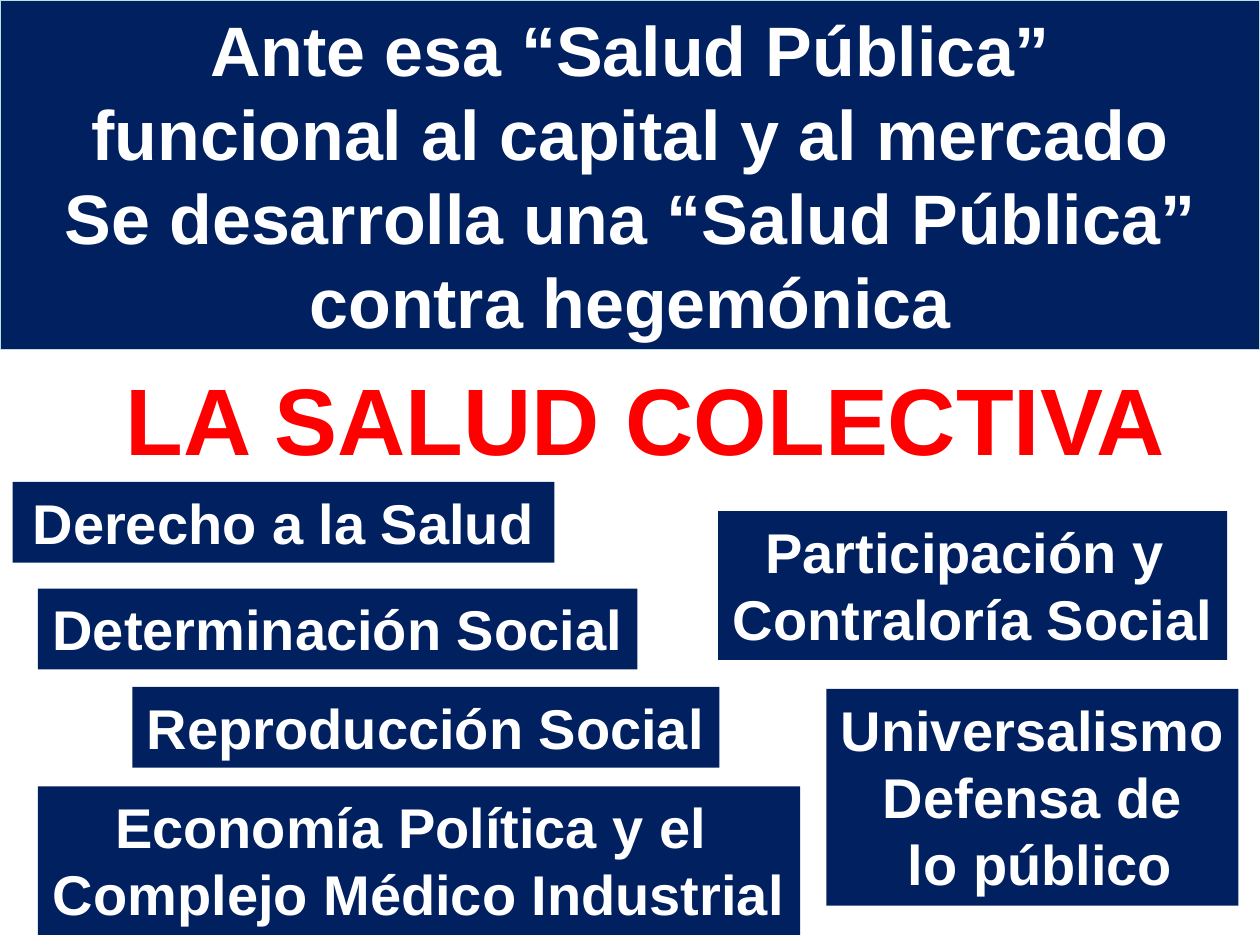
from dataclasses import dataclass

from pptx import Presentation
from pptx import util as u
from pptx.dml.color import RGBColor
from pptx.enum import shapes, text

WIDTH, HEIGHT = 10, 7.5
NAVY, WHITE, RED, PALE = "002060", "FFFFFF", "FF0000", "BBE0E3"


@dataclass
class Block:
    """Bold text block; position and size are shares of the slide."""
    x: float
    y: float
    w: float
    h: float
    lines: tuple[str, ...]
    size: int = 32
    color: str = WHITE
    fill: str | None = NAVY
    border: str | None = None
    wrap: bool = False
    align: text.PP_ALIGN = text.PP_ALIGN.CENTER


def rgb(value: str) -> RGBColor:
    return RGBColor.from_string(value)


def draw_block(s, b: Block) -> None:
    box = [u.Inches(n) for n in (b.x * WIDTH, b.y * HEIGHT, b.w * WIDTH, b.h * HEIGHT)]
    if b.fill:
        sp = s.shapes.add_shape(shapes.MSO_SHAPE.RECTANGLE, *box)
        sp.shadow.inherit = False
        sp.fill.solid()
        sp.fill.fore_color.rgb = rgb(b.fill)
        if b.border:
            sp.line.color.rgb = rgb(b.border)
            sp.line.width = u.Pt(0.75)
        else:
            sp.line.fill.background()
    else:
        sp = s.shapes.add_textbox(*box)

    tf = sp.text_frame
    tf.word_wrap = b.wrap
    tf.auto_size = text.MSO_AUTO_SIZE.SHAPE_TO_FIT_TEXT
    tf.vertical_anchor = text.MSO_ANCHOR.TOP
    for i, line in enumerate(b.lines):
        p = tf.add_paragraph() if i else tf.paragraphs[0]
        p.alignment = b.align
        r = p.add_run()
        r.text = line
        r.font.name = "Arial"
        r.font.size = u.Pt(b.size)
        r.font.bold = True
        r.font.color.rgb = rgb(b.color)


# Row heights for one, two and three lines of text
ONE, TWO, THREE = 0.64 / HEIGHT, 1.18 / HEIGHT, 1.72 / HEIGHT
LEFT = 0.03

BLOCKS = [
    # Heading band and central concept
    Block(0, 0, 1, 0.37,
          ("Ante esa “Salud Pública”", "funcional al capital y al mercado",
           "Se desarrolla una “Salud Pública” contra hegemónica"),
          size=40, border=PALE, wrap=True),
    Block(0.09, 0.375, 0.85, 0.135, ("LA SALUD COLECTIVA",),
          size=54, color=RED, fill=None, align=text.PP_ALIGN.LEFT),
    # Left-hand themes
    Block(0.01, 0.51, 0.43, ONE, ("Derecho a la Salud",)),
    Block(LEFT, 0.623, 0.476, ONE, ("Determinación Social",)),
    Block(0.105, 0.727, 0.466, ONE, ("Reproducción Social",)),
    Block(LEFT, 0.832, 0.605, TWO,
          ("Economía Política y el ", "Complejo Médico Industrial")),
    # Right-hand themes
    Block(0.57, 0.541, 0.404, TWO, ("Participación y ", "Contraloría Social")),
    Block(0.656, 0.729, 0.327, THREE,
          ("Universalismo", "Defensa de", " lo público")),
]


def main() -> None:
    prs = Presentation()
    prs.slide_width, prs.slide_height = u.Inches(WIDTH), u.Inches(HEIGHT)
    s = prs.slides.add_slide(prs.slide_layouts[6])
    s.background.fill.solid()
    s.background.fill.fore_color.rgb = rgb(WHITE)
    for block in BLOCKS:
        draw_block(s, block)
    prs.save("out.pptx")


if __name__ == "__main__":
    main()
